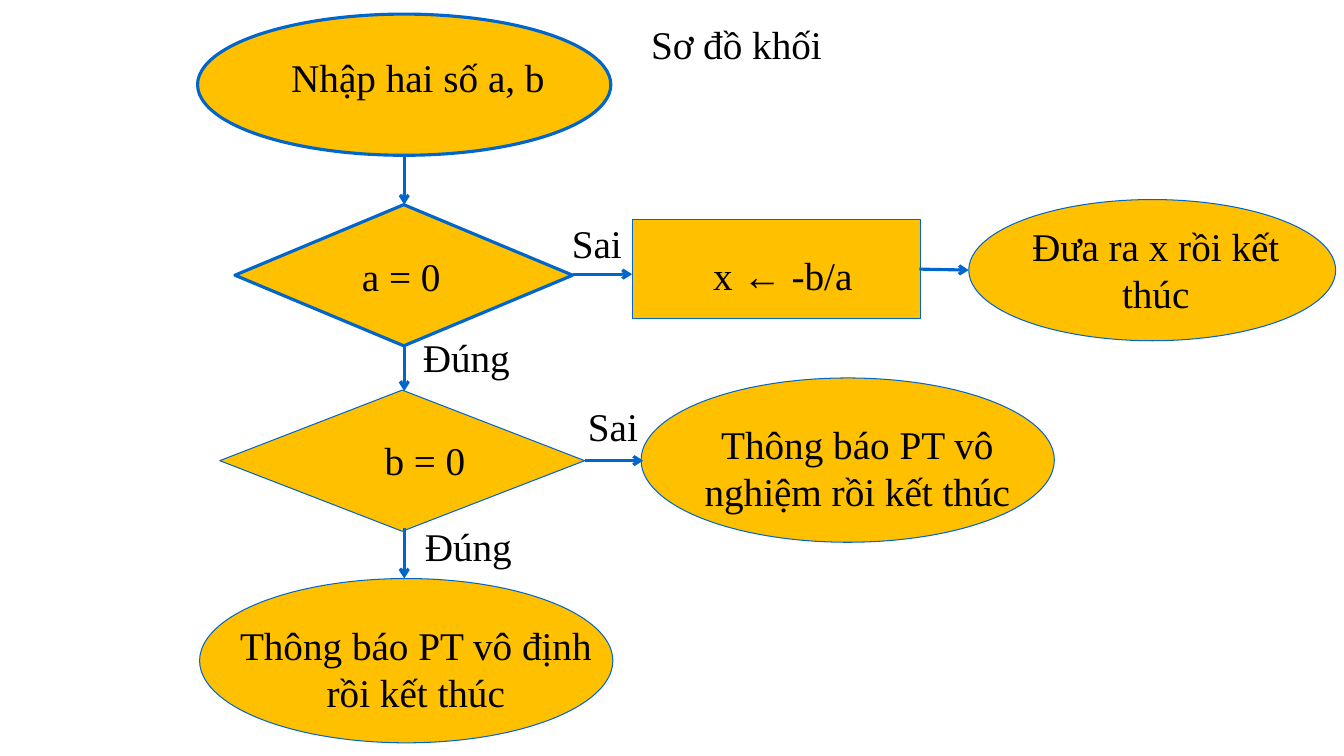
from lxml import etree
from pptx import Presentation
from pptx import util as u
from pptx.dml.color import RGBColor
from pptx.enum import shapes, text
from pptx.oxml.ns import qn


def colour(value):
    return RGBColor.from_string(value)


class Flowchart:
    FILL, LINE, INK = "FFC000", "0066CC", "000000"
    FONT = {"name": "Times New Roman", "size": u.Pt(28)}
    ONE_LINE, TWO_LINES = 7.6, 13.87

    def __init__(self, presentation):
        self.width = presentation.slide_width
        self.height = presentation.slide_height
        self.slide = presentation.slides.add_slide(presentation.slide_layouts[6])

    def place(self, *shares):
        return [round(share * side / 100)
                for share, side in zip(shares, (self.width, self.height) * 2)]

    def node(self, kind, box, line_width):
        shape = self.slide.shapes.add_shape(kind, *self.place(*box))
        shape.shadow.inherit = False
        shape.fill.solid()
        shape.fill.fore_color.rgb = colour(self.FILL)
        shape.line.color.rgb = colour(self.LINE)
        shape.line.width = u.Pt(line_width)

    def label(self, words, box, align=text.PP_ALIGN.CENTER,
              anchor=text.MSO_ANCHOR.TOP, wrap=True):
        frame = self.slide.shapes.add_textbox(*self.place(*box)).text_frame
        for name, value in {"word_wrap": wrap, "vertical_anchor": anchor}.items():
            setattr(frame, name, value)
        paragraph = frame.paragraphs[0]
        paragraph.text = words
        paragraph.alignment = align
        for name, value in self.FONT.items():
            setattr(paragraph.runs[0].font, name, value)
        paragraph.runs[0].font.color.rgb = colour(self.INK)

    def arrow(self, *ends):
        connector = self.slide.shapes.add_connector(
            shapes.MSO_CONNECTOR.STRAIGHT, *self.place(*ends))
        connector.line.color.rgb = colour(self.LINE)
        connector.line.width = u.Pt(2.25)
        outline = connector.line._get_or_add_ln()
        etree.SubElement(outline, qn("a:tailEnd"), type="arrow")
        etree.SubElement(connector._element.spPr, qn("a:effectLst"))


def main():
    presentation = Presentation()
    presentation.slide_width = u.Inches(13.33)
    presentation.slide_height = u.Inches(7.5)
    chart = Flowchart(presentation)
    one, two = chart.ONE_LINE, chart.TWO_LINES
    left = text.PP_ALIGN.LEFT

    chart.label("Sơ đồ khối", (47.7, 1.47, 22.35, 8.53), left,
                text.MSO_ANCHOR.MIDDLE)

    oval = shapes.MSO_SHAPE.OVAL
    decision = shapes.MSO_SHAPE.FLOWCHART_DECISION
    for kind, box, line_width in (
        (oval, (14.7, 1.87, 30.75, 18.67), 2.25),
        (decision, (17.48, 27.07, 25.13, 18.67), 2.25),
        (decision, (16.35, 51.6, 27.15, 18.67), 0.75),
        (oval, (14.85, 76.53, 30.75, 21.73), 0.75),
        (shapes.MSO_SHAPE.RECTANGLE, (47.03, 29.07, 21.45, 13.07), 0.75),
        (oval, (72.08, 26.4, 27.3, 18.67), 0.75),
        (oval, (47.7, 50, 30.75, 21.73), 0.75),
    ):
        chart.node(kind, box, line_width)

    trunk = 30.08
    for top, bottom in ((20.4, 27.07), (45.6, 51.73), (69.87, 76.53)):
        chart.arrow(trunk, top, trunk, bottom)
    for ends in (
        (42.6, 36.27, 47.03, 36.27),
        (68.4, 35.6, 72.08, 35.73),
        (43.5, 60.93, 47.85, 60.93),
    ):
        chart.arrow(*ends)

    chart.label("Nhập hai số a, b", (20.93, 6.4, 20.55, one), left, wrap=False)
    for words, box in (
        ("a = 0", (20.33, 32.67, 19.05, one)),
        ("b = 0", (19.73, 57.07, 23.78, one)),
        ("Thông báo PT vô định rồi kết thúc", (16.2, 81.47, 29.48, two)),
        ("x ← -b/a", (48.53, 32.53, 19.43, one)),
        ("Đưa ra x rồi kết thúc", (74.1, 28.8, 23.78, two)),
        ("Thông báo PT vô nghiệm rồi kết thúc", (49.05, 54.93, 29.48, two)),
        ("Đúng", (30.23, 43.47, 8.93, one)),
        ("Đúng", (30.38, 68.4, 8.93, one)),
        ("Sai", (39.98, 28.4, 8.85, one)),
        ("Sai", (41.18, 52.53, 8.85, one)),
    ):
        chart.label(words, box)

    presentation.save("out.pptx")


if __name__ == "__main__":
    main()
